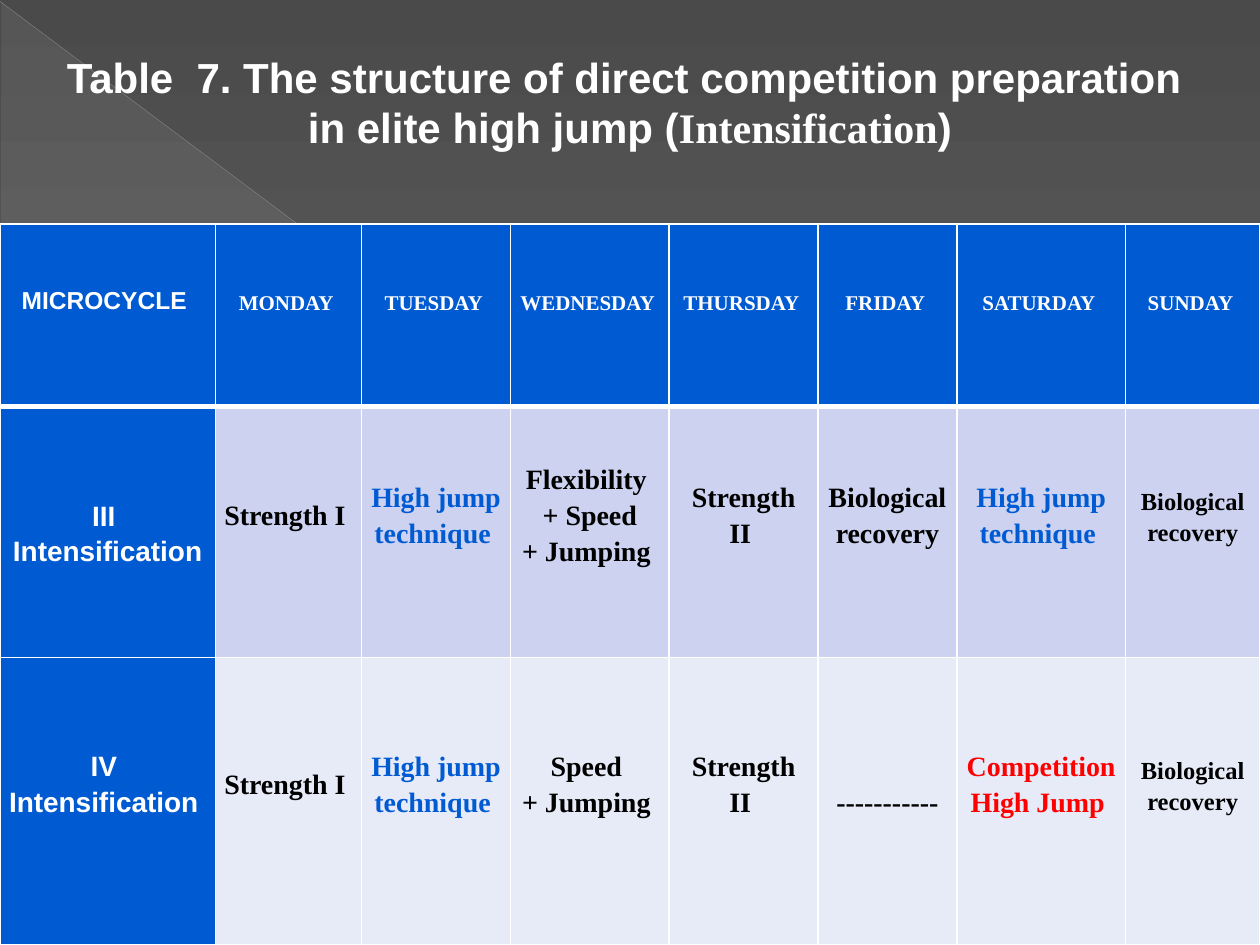
from lxml import etree
from pptx import Presentation
from pptx.dml.color import RGBColor
from pptx.enum.shapes import MSO_CONNECTOR, MSO_SHAPE
from pptx.enum.text import MSO_ANCHOR, PP_ALIGN
from pptx.oxml.ns import qn
from pptx.util import Cm, Pt

WHITE = RGBColor(0xFF, 0xFF, 0xFF)
BLACK = RGBColor(0x00, 0x00, 0x00)
BLUE = RGBColor(0x00, 0x5B, 0xD3)
RED = RGBColor(0xFF, 0x00, 0x00)
BAND_DARK = RGBColor(0xCC, 0xD2, 0xEF)
BAND_LIGHT = RGBColor(0xE7, 0xEA, 0xF7)
LIGHT_GREY = RGBColor(0xD2, 0xD2, 0xD2)
LINE_GREY = RGBColor(0xBF, 0xBF, 0xBF)
EDGE_GREY = RGBColor(0xC6, 0xC6, 0xC6)
SKY = [(0, RGBColor(0x4A, 0x4A, 0x4A), 100),
       (60, RGBColor(0x62, 0x62, 0x62), 100),
       (100, RGBColor(0x8C, 0x8C, 0x8C), 100)]
SHEEN = [(0, LIGHT_GREY, 10), (70, LIGHT_GREY, 8), (100, LIGHT_GREY, 1)]
CENTER = PP_ALIGN.CENTER
MIDDLE = MSO_ANCHOR.MIDDLE
SANS, SERIF = "Arial", "Times New Roman"
LINE_SPACING = 1.15

TITLE = [
    [("Table  7. The structure of direct competition preparation ", SANS)],
    [("in elite high jump (", SANS), ("Intensification", SERIF), (")", SANS)],
]
DIAGONALS = [
    ((0, 0.03), (25.37, 19.02), LINE_GREY, 0.39, 35),
    ((25.4, 13.74), (17.96, 19.02), EDGE_GREY, 0.47, 45),
]
COLUMN_WIDTHS = [4.34, 2.95, 3.0, 3.2, 3.0, 2.8, 3.4, 2.71]
ROW_HEIGHTS = [3.68, 5.05, 5.8]
ROW_FILLS = [BLUE, BAND_DARK, BAND_LIGHT]
TABLE_TOP = 4.52

DAYS = ["MONDAY ", "TUESDAY ", "WEDNESDAY ", "THURSDAY ", "FRIDAY ",
        "SATURDAY ", "SUNDAY "]
HEAD = {"name": SERIF, "size": 12, "color": WHITE}
CORNER = {"name": SANS, "size": 14, "color": WHITE}
PHASE = {"name": SANS, "size": 16, "color": WHITE}
PLAIN = {"name": SERIF, "size": 16, "color": BLACK}
JUMP = {**PLAIN, "color": BLUE}
CONTEST = {**PLAIN, "color": RED}
REST = {**PLAIN, "size": 14}

ROWS = [
    [(["MICROCYCLE "], CORNER)] + [([day], HEAD) for day in DAYS],
    [
        (["III ", "Intensification"], PHASE),
        (["Strength I "], PLAIN),
        (["High jump technique "], JUMP),
        (["Flexibility ", "+ Speed", "+ Jumping "], PLAIN),
        (["Strength II "], PLAIN),
        (["Biological recovery"], PLAIN),
        (["High jump technique "], JUMP),
        (["Biological recovery"], REST),
    ],
    [
        (["IV ", "Intensification "], PHASE),
        (["Strength I "], PLAIN),
        (["High jump technique "], JUMP),
        (["Speed ", "+ Jumping "], PLAIN),
        (["Strength II "], PLAIN),
        (["-----------"], PLAIN),
        (["Competition", "High Jump "], CONTEST),
        (["Biological recovery"], REST),
    ],
]
CENTERED_CELLS = {(1, 0), (2, 5)}


def add_color(parent, color, opacity=100):
    tint = etree.SubElement(parent, qn("a:srgbClr"), val=str(color))
    if opacity < 100:
        etree.SubElement(tint, qn("a:alpha"), val=str(opacity * 1000))


def paint_gradient(fill, element, stops, angle):
    fill.gradient()
    fill.gradient_angle = 360 - angle
    stop_list = next(element.iter(qn("a:gsLst")))
    for old_stop in list(stop_list):
        stop_list.remove(old_stop)
    for position, color, opacity in stops:
        stop = etree.SubElement(stop_list, qn("a:gs"), pos=str(position * 1000))
        add_color(stop, color, opacity)


def add_span(para, text, name, size, color):
    span = para.add_run()
    span.text = text
    for key, value in {"name": name, "size": Pt(size), "bold": True}.items():
        setattr(span.font, key, value)
    span.font.color.rgb = color


def add_diagonal(page, start, end, color, width, opacity):
    line = page.shapes.add_connector(
        MSO_CONNECTOR.STRAIGHT, *(Cm(value) for value in start + end))
    line.line.width = Pt(width)
    line.line.color.rgb = color
    tint = next(line.element.spPr.iter(qn("a:srgbClr")))
    etree.SubElement(tint, qn("a:alpha"), val=str(opacity * 1000))
    etree.SubElement(line.element.spPr, qn("a:effectLst"))


def add_borders(cell, widths):
    properties = cell._tc.get_or_add_tcPr()
    for side, width in widths.items():
        border = etree.SubElement(properties, qn("a:ln" + side), w=str(Pt(width)))
        add_color(etree.SubElement(border, qn("a:solidFill")), WHITE)


def fill_cell(cell, row, column, lines, style):
    add_borders(cell, {"L": 1, "R": 1, "T": 3 if row == 1 else 1,
                       "B": 3 if row == 0 else 1})
    cell.fill.solid()
    cell.fill.fore_color.rgb = BLUE if column == 0 else ROW_FILLS[row]
    lift = 0 if (row, column) in CENTERED_CELLS else style["size"] * LINE_SPACING ** 2
    layout = {"vertical_anchor": MIDDLE, "margin_left": Cm(0.18),
              "margin_right": Cm(0.18), "margin_top": 0, "margin_bottom": Pt(lift)}
    for key, value in layout.items():
        setattr(cell, key, value)
    for index, text in enumerate(lines):
        frame = cell.text_frame
        para = frame.add_paragraph() if index else frame.paragraphs[0]
        para.alignment = CENTER
        para.line_spacing = LINE_SPACING
        add_span(para, text, **style)


def add_schedule(page):
    table = page.shapes.add_table(
        len(ROWS), len(COLUMN_WIDTHS), 0, Cm(TABLE_TOP),
        Cm(sum(COLUMN_WIDTHS)), Cm(sum(ROW_HEIGHTS))).table
    table.first_row = table.horz_banding = False
    for column, width in zip(table.columns, COLUMN_WIDTHS):
        column.width = Cm(width)
    for row, height in zip(table.rows, ROW_HEIGHTS):
        row.height = Cm(height)
    for row, cells in enumerate(ROWS):
        for column, (lines, style) in enumerate(cells):
            fill_cell(table.cell(row, column), row, column, lines, style)


def add_title(page):
    box = page.shapes.add_textbox(0, Cm(0.91), Cm(25.4), Cm(2.31))
    box.text_frame.word_wrap = True
    para = box.text_frame.paragraphs[0]
    para.alignment = CENTER
    for index, line in enumerate(TITLE):
        if index:
            para.add_line_break()
        for text, name in line:
            add_span(para, text, name, 24, WHITE)


def main():
    deck = Presentation()
    deck.slide_width, deck.slide_height = Cm(25.4), Cm(19.05)
    page = deck.slides.add_slide(deck.slide_layouts[6])
    paint_gradient(page.background.fill, page.element, SKY, 90)
    triangle = page.shapes.add_shape(
        MSO_SHAPE.RIGHT_TRIANGLE, Cm(0.03), Cm(0.05), Cm(25.35), Cm(19))
    triangle.shadow.inherit = False
    triangle.line.fill.background()
    paint_gradient(triangle.fill, triangle.element, SHEEN, 133)
    for diagonal in DIAGONALS:
        add_diagonal(page, *diagonal)
    add_schedule(page)
    add_title(page)
    deck.save("out.pptx")


if __name__ == "__main__":
    main()
